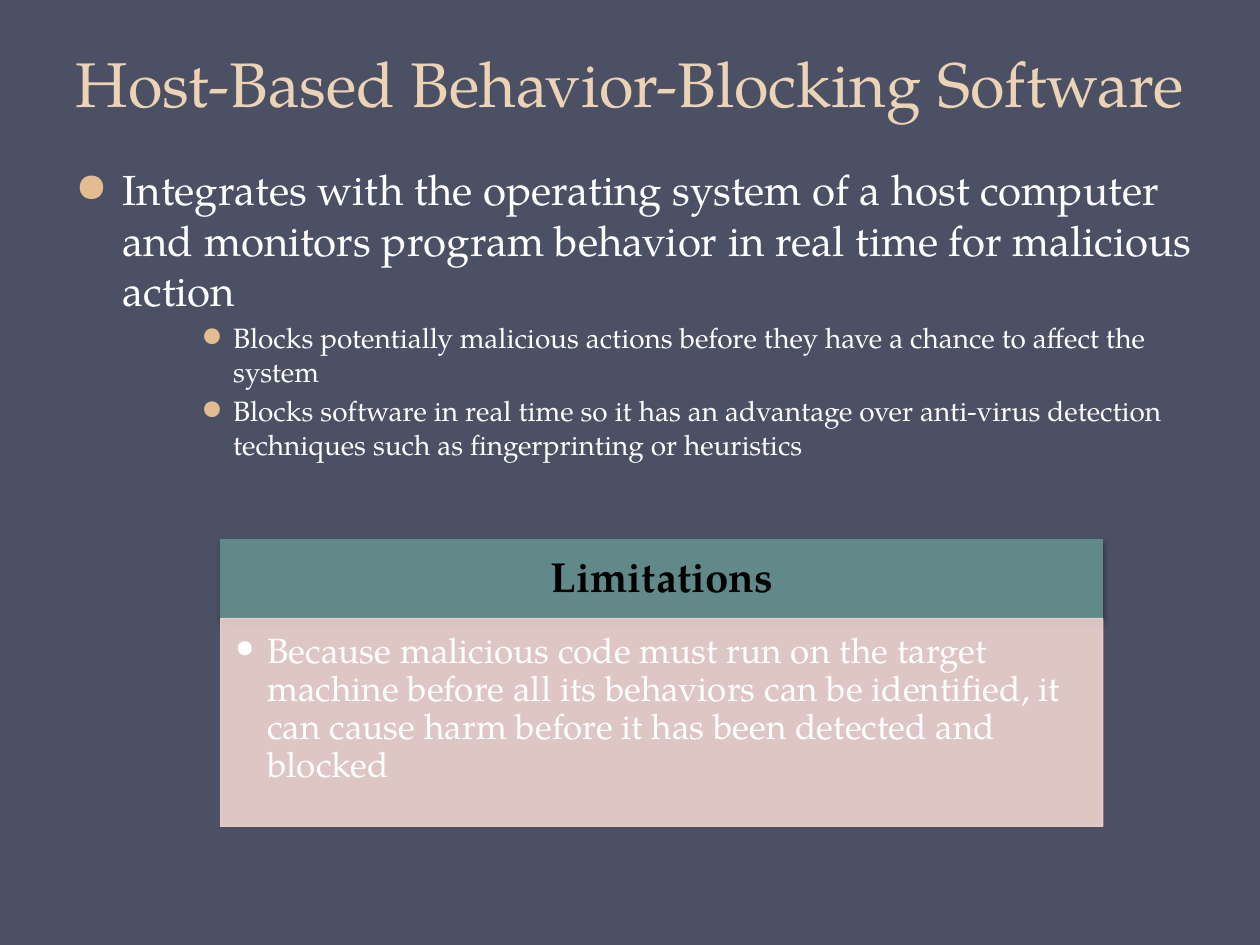
from dataclasses import dataclass
from typing import Optional

from lxml.etree import SubElement
from pptx import Presentation
from pptx.dml.color import RGBColor as Rgb
from pptx.enum.shapes import MSO_SHAPE as Preset
from pptx.enum.text import MSO_ANCHOR as Anchor, MSO_AUTO_SIZE as AutoSize, PP_ALIGN as Align
from pptx.oxml.ns import qn
from pptx.util import Cm, Pt


@dataclass(frozen=True)
class Theme:
    font: str = "TeX Gyre Pagella"
    background: str = "4B5064"
    title: str = "EDD3B6"
    bullet: str = "E3BC92"
    text: str = "FFFFFF"
    heading: str = "000000"
    header_fill: str = "61898A"
    panel_fill: str = "EED3D0"
    title_size: int = 36
    large: int = 24
    medium: int = 20
    small: int = 16


@dataclass(frozen=True)
class Bullet:
    indent: float  # cm from the box edge to the text
    hang: float  # cm from the bullet to the text
    color: Optional[str] = None
    percent: int = 100


@dataclass(frozen=True)
class Item:
    text: str
    size: int
    color: str
    bold: bool = False
    level: int = 0
    align: Align = Align.LEFT
    line: float = 1.0
    before: float = 0
    after: float = 0
    bullet: Optional[Bullet] = None


@dataclass(frozen=True)
class Panel:
    top: float
    height: float
    fill: str
    opacity: int
    insets: tuple[float, float, float, float]
    anchor: Anchor
    shadow: bool
    item: Item


THEME = Theme()
PANEL_LEFT, PANEL_WIDTH = 4.45, 17.78
MAIN = Bullet(0.95, 0.95, THEME.bullet, 140)
SUB = Bullet(3.18, 0.64, THEME.bullet, 140)
PLAIN = Bullet(0.64, 0.64)

TITLE = Item("Host-Based Behavior-Blocking Software", THEME.title_size, THEME.title,
             align=Align.CENTER, line=Pt(58))
BODY = [
    Item("Integrates with the operating system of a host computer and monitors "
         "program behavior in real time for malicious action",
         THEME.large, THEME.text, before=4.8, bullet=MAIN),
    Item("Blocks potentially malicious actions before they have a chance to affect the system",
         THEME.small, THEME.text, level=2, before=3.2, bullet=SUB),
    Item("Blocks software in real time so it has an advantage over anti-virus detection "
         "techniques such as fingerprinting or heuristics",
         THEME.small, THEME.text, level=2, before=3.2, bullet=SUB),
]
PANELS = [
    Panel(10.87, 1.6, THEME.header_fill, 100, (0.48, 0.28, 0.48, 0.28), Anchor.MIDDLE, True,
          Item("Limitations", THEME.large, THEME.heading, bold=True,
               align=Align.CENTER, line=0.9)),
    Panel(12.47, 4.19, THEME.panel_fill, 90, (0.3, 0.3, 0.41, 0.43), Anchor.TOP, False,
          Item("Because malicious code must run on the target machine before all its "
               "behaviors can be identified, it can cause harm before it has been "
               "detected and blocked",
               THEME.medium, THEME.text, level=1, line=0.9, after=3, bullet=PLAIN)),
]


def place(box, left: float, top: float, width: float, height: float) -> None:
    box.left, box.top, box.width, box.height = map(Cm, (left, top, width, height))


def add_bullet(para, bullet: Bullet) -> None:
    properties = para._p.get_or_add_pPr()
    properties.set("marL", str(Cm(bullet.indent)))
    properties.set("indent", str(-Cm(bullet.hang)))
    if bullet.color:
        color = SubElement(properties, qn("a:buClr"))
        SubElement(color, qn("a:srgbClr"), val=bullet.color)
    SubElement(properties, qn("a:buSzPct"), val=str(bullet.percent * 1000))
    SubElement(properties, qn("a:buFont"), typeface=THEME.font)
    SubElement(properties, qn("a:buChar"), char="•")


def write(box, items: list[Item], anchor: Anchor) -> None:
    frame = box.text_frame
    frame.word_wrap = True
    frame.auto_size = AutoSize.NONE
    frame.vertical_anchor = anchor
    for index, item in enumerate(items):
        para = frame.add_paragraph() if index else frame.paragraphs[0]
        para.alignment, para.level = item.align, item.level
        para.line_spacing = item.line
        para.space_before, para.space_after = Pt(item.before), Pt(item.after)
        if item.bullet:
            add_bullet(para, item.bullet)
        span = para.add_run()
        span.text = item.text
        span.font.name, span.font.size, span.font.bold = THEME.font, Pt(item.size), item.bold
        span.font.color.rgb = Rgb.from_string(item.color)


def add_shadow(box) -> None:
    effects = box._element.spPr.find(qn("a:effectLst"))
    shadow = SubElement(effects, qn("a:outerShdw"), blurRad=str(Pt(3.1)), dist=str(Pt(1.8)),
                        dir="5400000", rotWithShape="0")
    color = SubElement(shadow, qn("a:srgbClr"), val="000000")
    SubElement(color, qn("a:alpha"), val="35000")


def add_panel(page, panel: Panel) -> None:
    box = page.shapes.add_shape(Preset.RECTANGLE, 0, 0, 0, 0)
    place(box, PANEL_LEFT, panel.top, PANEL_WIDTH, panel.height)
    box.fill.solid()
    box.fill.fore_color.rgb = box.line.color.rgb = Rgb.from_string(panel.fill)
    box.line.width = Pt(0.75)
    if panel.opacity < 100:
        for color in box._element.spPr.iter(qn("a:srgbClr")):
            SubElement(color, qn("a:alpha"), val=str(panel.opacity * 1000))
    box.shadow.inherit = False
    if panel.shadow:
        add_shadow(box)
    frame = box.text_frame
    (frame.margin_left, frame.margin_top,
     frame.margin_right, frame.margin_bottom) = map(Cm, panel.insets)
    write(box, [panel.item], panel.anchor)


def main() -> None:
    deck = Presentation()
    deck.slide_width, deck.slide_height = Cm(25.4), Cm(19.05)
    page = deck.slides.add_slide(deck.slide_layouts[5])
    page.background.fill.solid()
    page.background.fill.fore_color.rgb = Rgb.from_string(THEME.background)

    # Title
    title = page.shapes.title
    place(title, 0, -0.64, 25.4, 3.18)
    write(title, [TITLE], Anchor.BOTTOM)

    # Bulleted description
    body = page.shapes.add_textbox(0, 0, 0, 0)
    place(body, 1.27, 3.18, 23.5, 8.46)
    write(body, BODY, Anchor.TOP)

    # Limitations header and its panel
    for panel in PANELS:
        add_panel(page, panel)

    deck.save("out.pptx")


if __name__ == "__main__":
    main()
